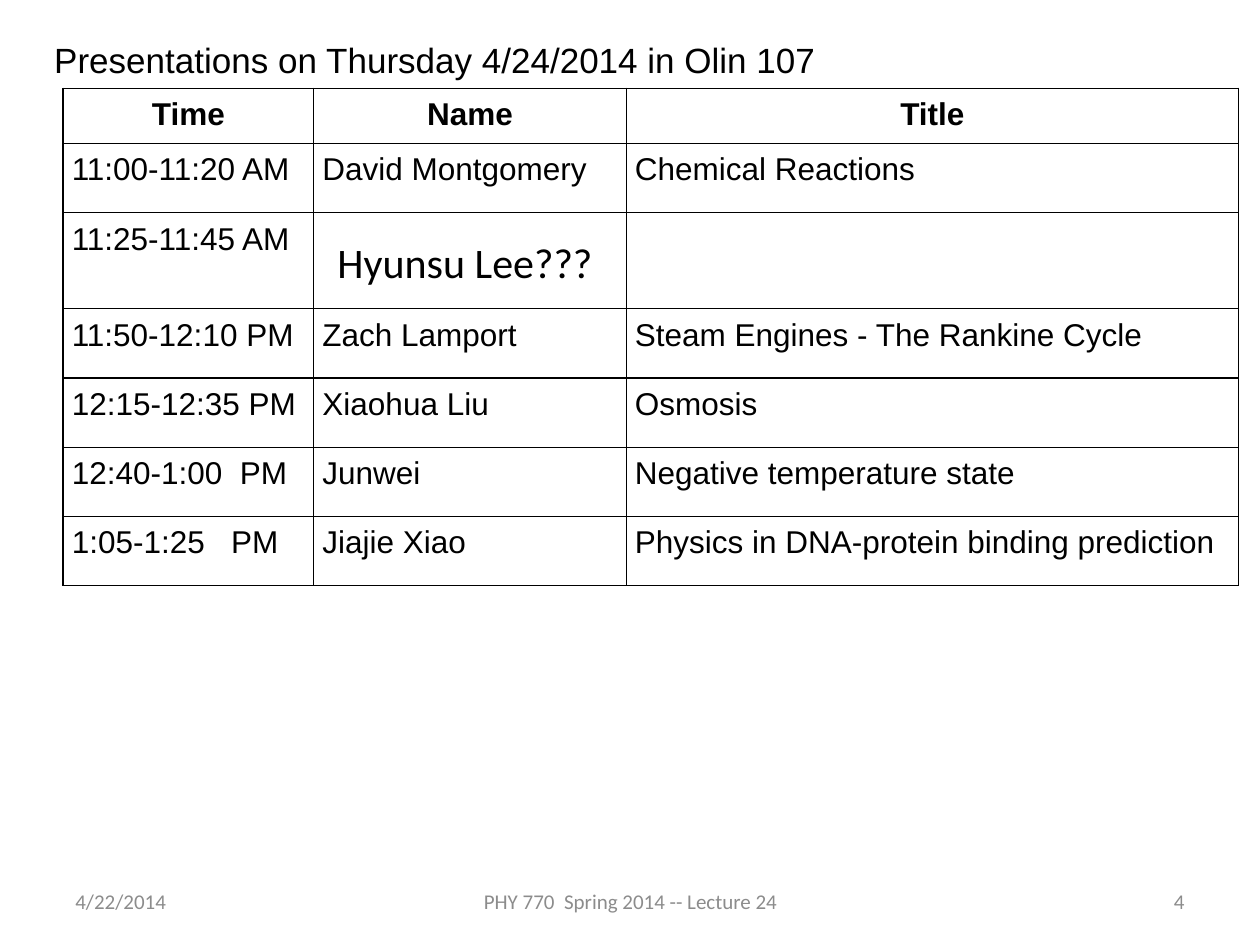
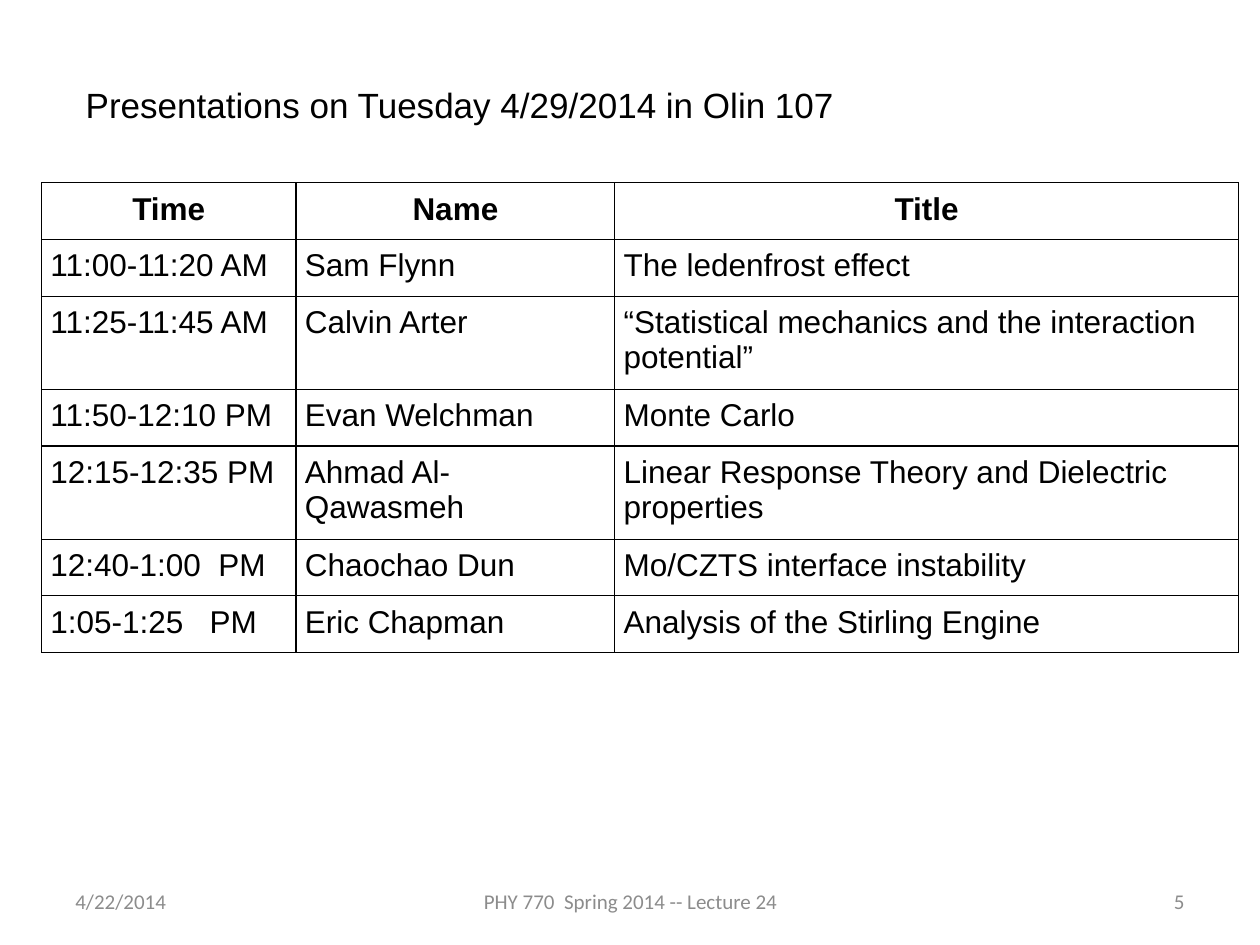
import pptx
import pptx.dml.color
import pptx.enum.text
import pptx.oxml.ns
import pptx.util
from lxml import etree

Inches = pptx.util.Inches
ALIGN = pptx.enum.text.PP_ALIGN
ANCHOR = pptx.enum.text.MSO_ANCHOR
AUTO_SIZE = pptx.enum.text.MSO_AUTO_SIZE

BLACK, GRAY = "000000", "8C8C8C"
HEADINGS = ("Time", "Name", "Title")
TIMES = ("11:00-11:20 AM", "11:25-11:45 AM", "11:50-12:10 PM",
         "12:15-12:35 PM", "12:40-1:00  PM", "1:05-1:25   PM")
THURSDAY = (("David Montgomery", "Chemical Reactions"),
            ("", ""),
            ("Zach Lamport", "Steam Engines - The Rankine Cycle"),
            ("Xiaohua Liu", "Osmosis"),
            ("Junwei", "Negative temperature state"),
            ("Jiajie Xiao", "Physics in DNA-protein binding prediction"))
TUESDAY = (("Sam Flynn", "The ledenfrost effect"),
           ("Calvin Arter", "“Statistical mechanics and the interaction potential”"),
           ("Evan Welchman", "Monte Carlo"),
           ("Ahmad Al-Qawasmeh", "Linear Response Theory and Dielectric properties"),
           ("Chaochao Dun", "Mo/CZTS interface instability"),
           ("Eric Chapman", "Analysis of the Stirling Engine"))


def rgb(color):
    return pptx.dml.color.RGBColor.from_string(color)


def write(tf, text, size, font, color=BLACK, align=ALIGN.LEFT, bold=False):
    p = tf.paragraphs[0]
    p.alignment = align
    r = p.add_run()
    r.text = text
    r.font.size = pptx.util.Pt(size)
    r.font.name = font
    r.font.bold = bold
    r.font.color.rgb = rgb(color)


def add_text(slide, box, text, size, color=BLACK, align=ALIGN.LEFT, anchor=ANCHOR.TOP):
    tf = slide.shapes.add_textbox(*map(Inches, box)).text_frame
    tf.word_wrap = True
    tf.vertical_anchor = anchor
    write(tf, text, size, "Calibri", color, align)


def add_title(slide, box, text):
    sp = slide.shapes.title
    sp.left, sp.top, sp.width, sp.height = map(Inches, box)
    tf = sp.text_frame
    tf.word_wrap = False
    tf.auto_size = AUTO_SIZE.SHAPE_TO_FIT_TEXT
    tf.vertical_anchor = ANCHOR.MIDDLE
    write(tf, text, 20, "Arial")


def add_footer(slide, number):
    for left, width, text, align in ((0.5, 2.33, "4/22/2014", ALIGN.LEFT),
                                     (3.42, 3.17, "PHY 770  Spring 2014 -- Lecture 24", ALIGN.CENTER),
                                     (7.17, 2.33, str(number), ALIGN.RIGHT)):
        add_text(slide, (left, 6.95, width, 0.4), text, 12, GRAY, align, ANCHOR.MIDDLE)


def add_borders(cell):
    tc_pr = cell._tc.get_or_add_tcPr()
    qn = pptx.oxml.ns.qn
    for side in ("a:lnL", "a:lnR", "a:lnT", "a:lnB"):
        ln = etree.SubElement(tc_pr, qn(side), w=str(pptx.util.Pt(0.75)))
        fill = etree.SubElement(ln, qn("a:solidFill"))
        etree.SubElement(fill, qn("a:srgbClr"), val=BLACK)


def add_schedule(slide, left, top, widths, heights, talks):
    rows = [HEADINGS] + [(time, *talk) for time, talk in zip(TIMES, talks)]
    table = slide.shapes.add_table(
        len(rows), len(HEADINGS), Inches(left), Inches(top),
        Inches(sum(widths)), Inches(sum(heights))).table
    table.first_row = table.horz_banding = False
    for column, width in zip(table.columns, widths):
        column.width = Inches(width)
    for i, (row, height, texts) in enumerate(zip(table.rows, heights, rows)):
        row.height = Inches(height)
        for cell, text in zip(row.cells, texts):
            cell.margin_left = cell.margin_right = Inches(0.07)
            cell.margin_top = cell.margin_bottom = Inches(0.07)
            add_borders(cell)
            cell.fill.background()
            if text:
                write(cell.text_frame, text, 18, "Arial", bold=i == 0,
                      align=ALIGN.LEFT if i else ALIGN.CENTER)


def add_slide(prs, number, title, title_box):
    slide = prs.slides.add_slide(prs.slide_layouts[5])
    add_footer(slide, number)
    add_title(slide, title_box, title)
    return slide


def main():
    prs = pptx.Presentation()
    prs.slide_width, prs.slide_height = Inches(10), Inches(7.5)

    # Thursday talks, with one speaker unconfirmed
    slide = add_slide(prs, 4, "Presentations on Thursday 4/24/2014 in Olin 107",
                      (0.33, 0.25, 6.29, 0.44))
    add_schedule(slide, 0.5, 0.7, (1.99, 2.48, 4.86),
                 (0.43, 0.55, 0.76, 0.55, 0.55, 0.55, 0.55), THURSDAY)
    add_text(slide, (2.58, 1.83, 2.33, 0.5), "Hyunsu Lee???", 24)

    # Tuesday talks, with taller rows where text wraps
    slide = add_slide(prs, 5, "Presentations on Tuesday 4/29/2014 in Olin 107",
                      (0.58, 0.61, 6.19, 0.44))
    add_schedule(slide, 0.33, 1.45, (2.02, 2.53, 4.95),
                 (0.45, 0.45, 0.74, 0.45, 0.74, 0.45, 0.45), TUESDAY)

    prs.save("out.pptx")


if __name__ == "__main__":
    main()
